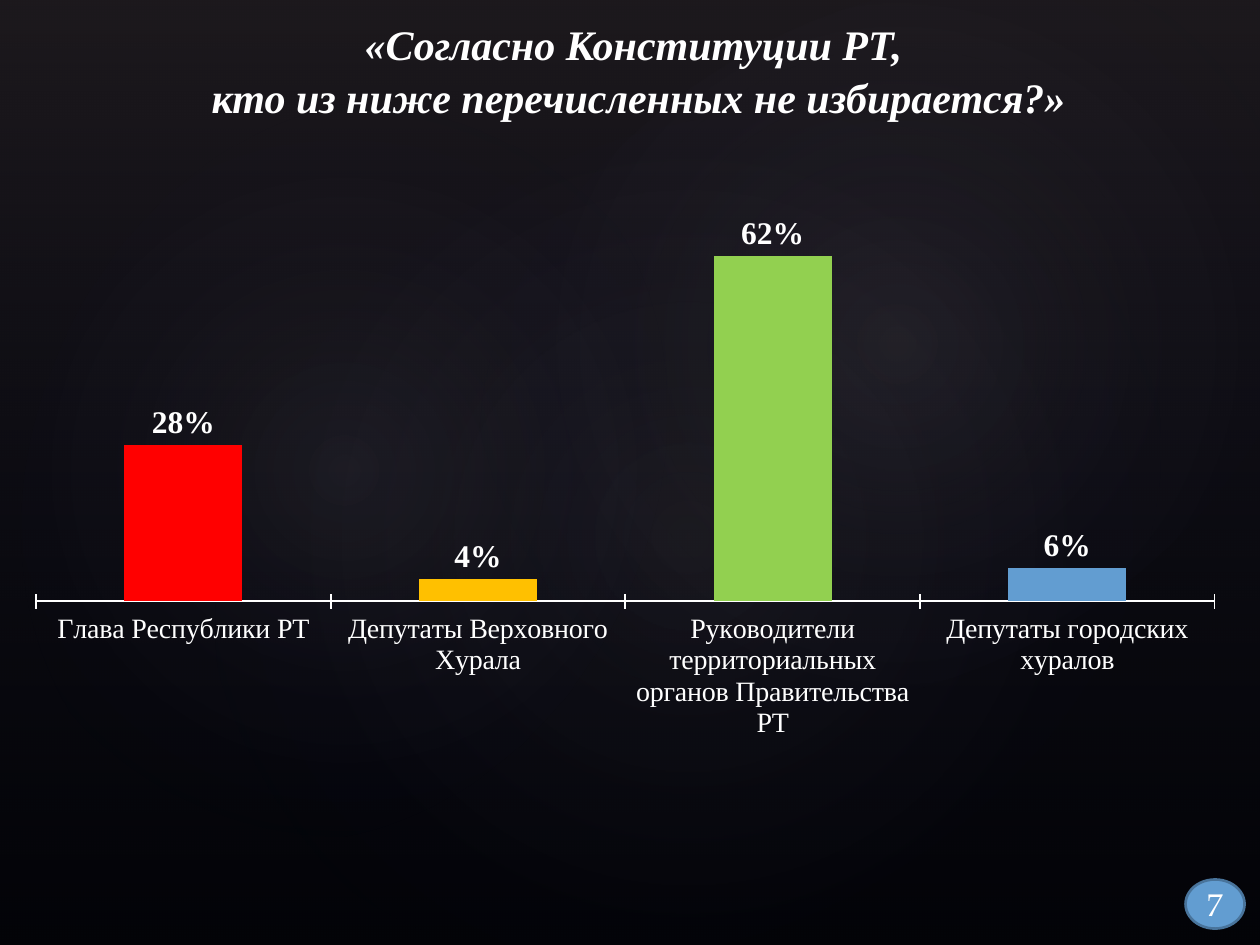
from lxml import etree
from pptx import Presentation
from pptx.chart.data import CategoryChartData as Data
from pptx.dml.color import RGBColor as RGB
from pptx.enum.chart import XL_CHART_TYPE as Kind, XL_LABEL_POSITION as Spot
from pptx.enum.chart import XL_TICK_LABEL_POSITION as Tags, XL_TICK_MARK as Tick
from pptx.enum.shapes import MSO_SHAPE as Form
from pptx.enum.text import MSO_ANCHOR as Anchor, MSO_AUTO_SIZE as Fit, PP_ALIGN as Align
from pptx.oxml import parse_xml
from pptx.oxml.ns import nsdecls, qn
from pptx.util import Cm, Pt

# Content
HUE = {"back": "000000", "text": "FFFFFF", "dusk": "504652", "navy": "242852",
       "glow": "C4BCC6", "blue": "629DD1", "edge": "49749B",
       "red": "FF0000", "gold": "FFC000", "green": "92D050"}
SERIF, BODY = "Times New Roman", "TeX Gyre Pagella"
TITLE = "«Согласно Конституции РТ,\v кто из ниже перечисленных не избирается?»"
BARS = [("Глава Республики РТ", 0.28, "red"),
        ("Депутаты Верховного Хурала", 0.04, "gold"),
        ("Руководители территориальных органов Правительства РТ", 0.62, "green"),
        ("Депутаты городских хуралов", 0.06, "blue")]
PAGE = "7"

# Places in cm: left, top, width, height
WIDE, HIGH = 25.4, 19.05
HEAD = (1.57, 0.41, 22.4, 2.18)
GRAPH = (0.71, 3.38, 23.8, 13.49)
BADGE = (23.9, 17.73, 1.19, 0.99)
PLOT = {"x": 0, "y": 0.066, "w": 0.999, "h": 0.582}
# Glows: place, turn, opacity in percent
GLOWS = [((3.81, 2.9, 20.12, 15.85), 328.7, 7),
         ((-0.76, 3.25, 15.39, 12.45), 294.3, 8),
         ((9.09, 0.33, 18.01, 13.21), 328.7, 8)]
LINEAR = '<a:lin ang="5400000" scaled="0"/>'
ROUND = ('<a:path path="circle"><a:fillToRect l="50000" t="50000" '
         'r="50000" b="50000"/></a:path>')


def color(name):
    return RGB.from_string(HUE[name])


def style(font, **form):
    form = {"name": SERIF, "bold": False, "italic": False, **form}
    for key, val in form.items():
        setattr(font, key, val)
    font.color.rgb = color("text")


def shape(form, place):
    item = slide.shapes.add_shape(form, *map(Cm, place))
    item.shadow.inherit = False
    return item


def fade(item, stops, path):
    """Fill with a gradient; stops are position, colour, opacity."""
    item.line.fill.background()
    item.fill.background()
    marks = "".join(
        f'<a:gs pos="{pos * 1000}"><a:srgbClr val="{HUE[name]}">'
        f'<a:alpha val="{part * 1000}"/></a:srgbClr></a:gs>'
        for pos, name, part in stops)
    grad = parse_xml(f'<a:gradFill {nsdecls("a")} rotWithShape="1">'
                     f'<a:gsLst>{marks}</a:gsLst>{path}</a:gradFill>')
    props = item.element.spPr
    props.replace(props.find(qn("a:noFill")), grad)


deck = Presentation()
deck.slide_width, deck.slide_height = Cm(WIDE), Cm(HIGH)
slide = deck.slides.add_slide(deck.slide_layouts[5])

# Backdrop
slide.background.fill.solid()
slide.background.fill.fore_color.rgb = color("back")
fade(shape(Form.RECTANGLE, (0, 0, WIDE, HIGH)),
     [(0, "dusk", 36), (100, "navy", 10)], LINEAR)
for place, turn, part in GLOWS:
    glow = shape(Form.OVAL, place)
    glow.rotation = turn
    fade(glow, [(0, "glow", part), (58, "navy", 0)], ROUND)

# Title, raised above the backdrop
title = slide.shapes.title
title.element.getparent().append(title.element)
title.left, title.top, title.width, title.height = map(Cm, HEAD)
frame = title.text_frame
frame.text = TITLE
frame.auto_size, frame.vertical_anchor = Fit.NONE, Anchor.BOTTOM
para = frame.paragraphs[0]
para.alignment, para.line_spacing = Align.CENTER, 1.05
for run in para.runs:
    style(run.font, size=Pt(24), bold=True, italic=True)

# Chart
data = Data(number_format="0%")
data.categories = [bar[0] for bar in BARS]
data.add_series("Series 1", [bar[1] for bar in BARS])
chart = slide.shapes.add_chart(Kind.COLUMN_CLUSTERED, *map(Cm, GRAPH), data).chart
chart.has_legend = chart.has_title = False
style(chart.font, name=BODY, size=Pt(10))

axis = chart.category_axis
axis.major_tick_mark, axis.minor_tick_mark = Tick.CROSS, Tick.NONE
axis.has_major_gridlines = False
axis.tick_label_position = Tags.LOW
axis.format.line.color.rgb = color("text")
axis.format.line.width = Pt(1)
style(axis.tick_labels.font, size=Pt(16))
scale = chart.value_axis
scale.minimum_scale, scale.maximum_scale = 0, 0.7
scale.has_major_gridlines = scale.visible = False

plot = chart.plots[0]
plot.gap_width, plot.vary_by_categories = 150, False
row = plot.series[0]
row.format.fill.solid()
row.format.fill.fore_color.rgb = color("blue")
for num, (_, _, name) in enumerate(BARS):
    fill = row.points[num].format.fill
    fill.solid()
    fill.fore_color.rgb = color(name)
labels = row.data_labels
labels.show_value, labels.position = True, Spot.OUTSIDE_END
labels.number_format, labels.number_format_is_linked = "0%", False
style(labels.font, size=Pt(18), bold=True)

# Fixed inner plot area
area = chart.element.find(".//" + qn("c:plotArea"))
old = area.find(qn("c:layout"))
if old is not None:
    area.remove(old)
box = etree.Element(qn("c:layout"))
hand = etree.SubElement(box, qn("c:manualLayout"))
modes = {"layoutTarget": "inner", "xMode": "edge", "yMode": "edge"}
for key, val in {**modes, **PLOT}.items():
    etree.SubElement(hand, qn("c:" + key), val=str(val))
area.insert(0, box)

# Page badge
badge = shape(Form.OVAL, BADGE)
badge.fill.solid()
badge.fill.fore_color.rgb = color("blue")
badge.line.color.rgb = color("edge")
badge.line.width = Pt(1.5)
frame = badge.text_frame
margins = dict.fromkeys(("left", "right", "top", "bottom"), 0)
for side, gap in margins.items():
    setattr(frame, "margin_" + side, gap)
frame.text, frame.vertical_anchor = PAGE, Anchor.MIDDLE
para = frame.paragraphs[0]
para.alignment = Align.CENTER
style(para.runs[0].font, name=BODY, size=Pt(18))

deck.save("out.pptx")
